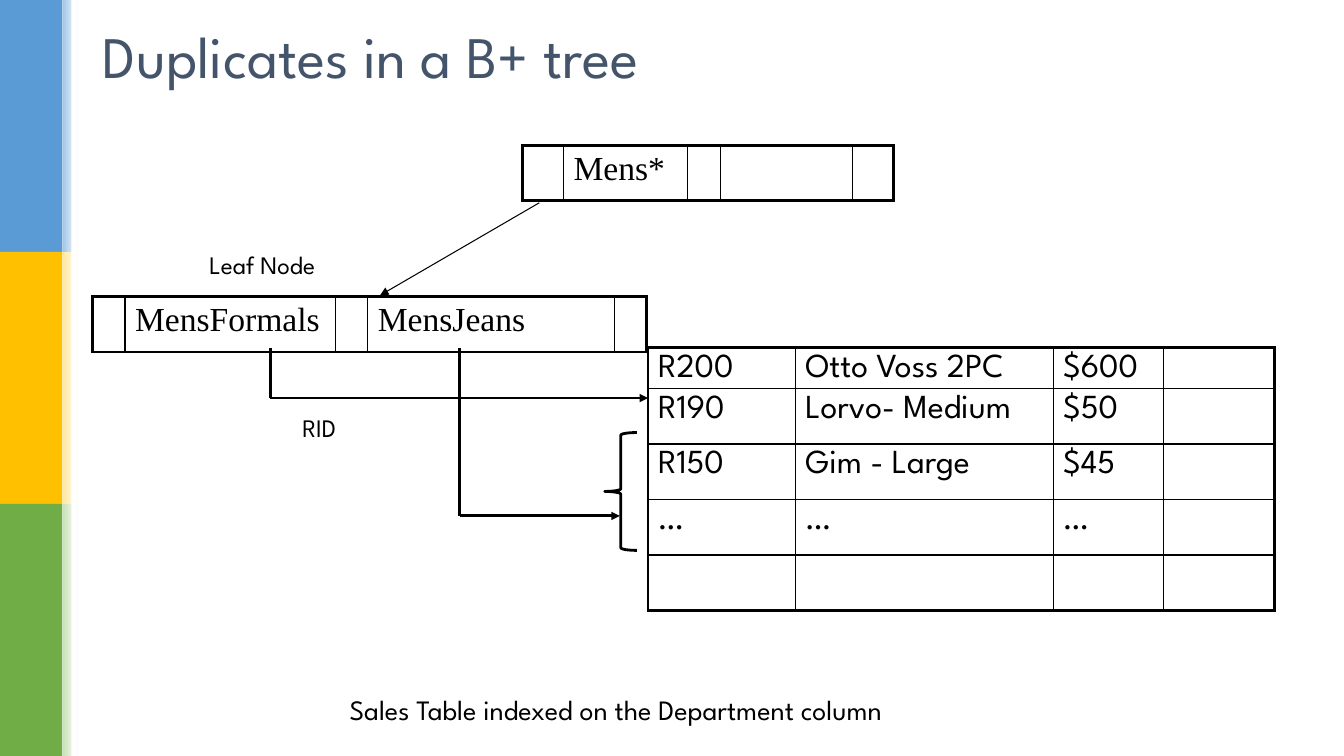
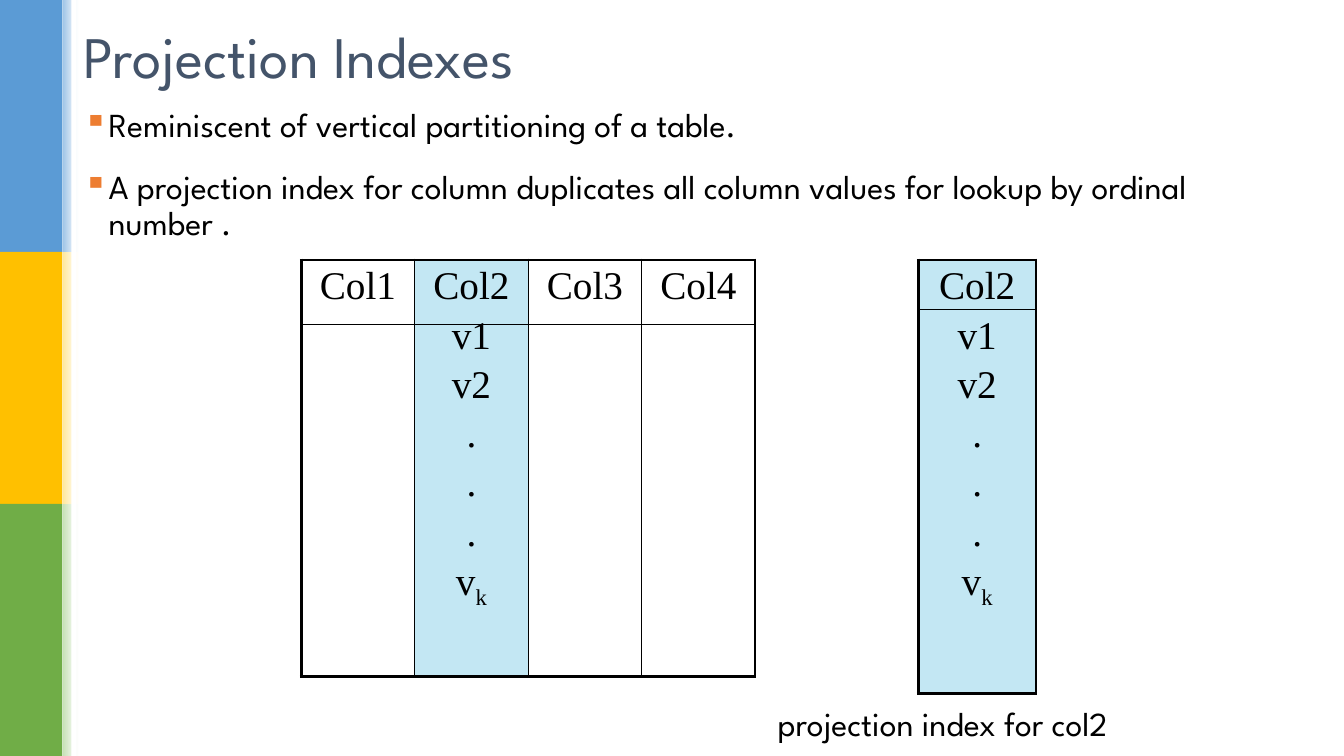
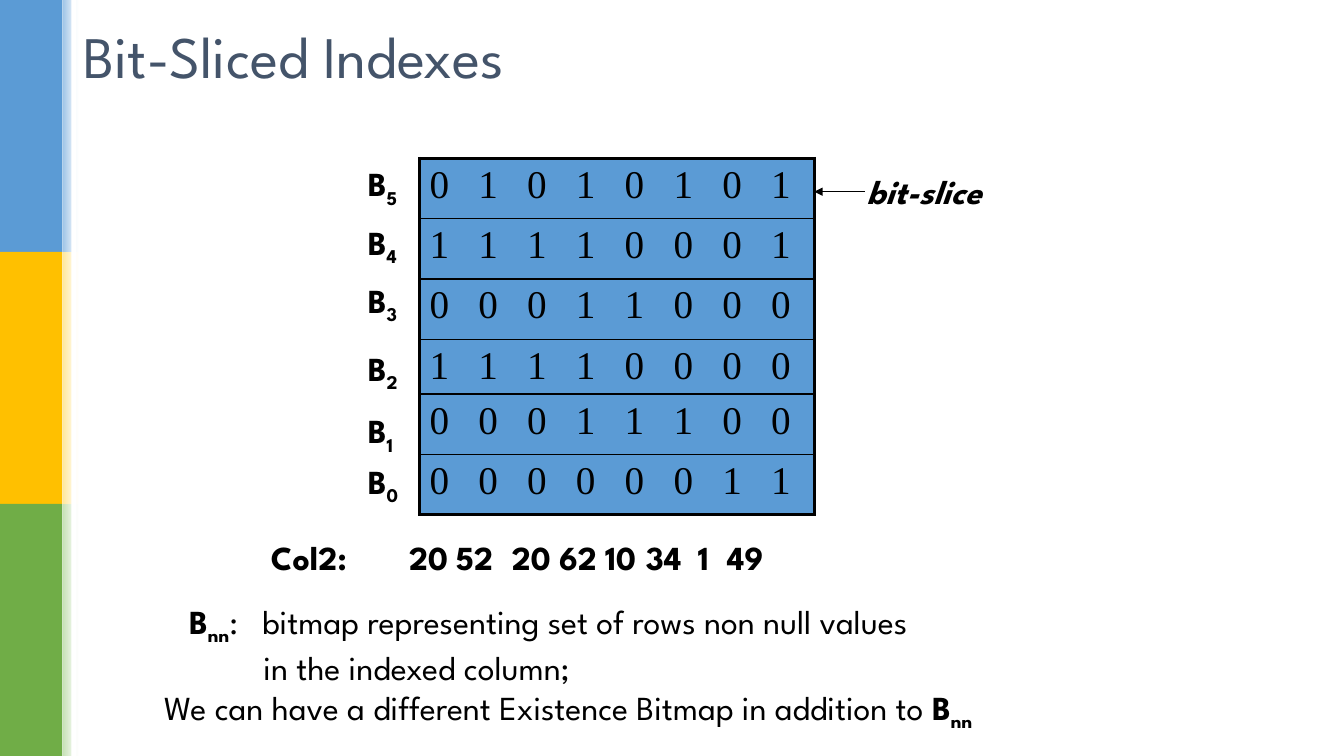
from lxml.etree import SubElement
from pptx import Presentation
from pptx.dml.color import RGBColor
from pptx.enum.shapes import MSO_CONNECTOR as Connector, MSO_SHAPE as Shape
from pptx.enum.text import MSO_ANCHOR as Anchor, MSO_AUTO_SIZE as AutoSize, PP_ALIGN as Align
from pptx.oxml.ns import qn
from pptx.util import Cm, Pt

BLACK = RGBColor(0x00, 0x00, 0x00)
WHITE = RGBColor(0xFF, 0xFF, 0xFF)
SLATE = RGBColor(0x44, 0x54, 0x6A)
BLUE = RGBColor(0x5B, 0x9B, 0xD5)
YELLOW = RGBColor(0xFF, 0xC0, 0x00)
GREEN = RGBColor(0x70, 0xAD, 0x47)
PALE_BLUE = RGBColor(0x9D, 0xC3, 0xE6)
PALE_YELLOW = RGBColor(0xFF, 0xE6, 0x99)
PALE_GREEN = RGBColor(0xC5, 0xE0, 0xB4)
ORANGE = RGBColor(0xED, 0x7D, 0x31)
SKY = RGBColor(0xC3, 0xE7, 0xF3)

SANS = "League Spartan"
SERIF = "Times New Roman"
SLIDE_WIDTH, SLIDE_HEIGHT = 33.87, 19.05
BANDS = [(BLUE, PALE_BLUE), (YELLOW, PALE_YELLOW), (GREEN, PALE_GREEN)]
THIN, THICK = 1, 2.25


def write(paragraph, text, size=24, font=SANS, color=BLACK, bold=False, italic=False):
    """Write text in which every second part between underscores is a subscript."""
    for index, part in enumerate(text.split("_")):
        if not part:
            continue
        run = paragraph.add_run()
        run.text = part
        run.font.size = Pt(size)
        run.font.name = font
        run.font.color.rgb = color
        run.font.bold = bold
        run.font.italic = italic
        if index % 2:
            run.font._element.set("baseline", "-25000")


def set_indent(paragraph, left, first=0):
    properties = paragraph._p.get_or_add_pPr()
    properties.set("marL", str(Cm(left)))
    properties.set("indent", str(Cm(first)))
    return properties


def set_bullet(paragraph):
    properties = set_indent(paragraph, 0.64, -0.64)
    color = SubElement(properties, qn("a:buClr"))
    SubElement(color, qn("a:srgbClr"), val=str(ORANGE))
    SubElement(properties, qn("a:buChar"), char="▪")


def set_tabs(paragraph, stops):
    tabs = SubElement(paragraph._p.get_or_add_pPr(), qn("a:tabLst"))
    for stop in stops:
        SubElement(tabs, qn("a:tab"), pos=str(Cm(stop)), algn="l")


def add_frame(slide, left, top, width, height=1.27):
    frame = slide.shapes.add_textbox(Cm(left), Cm(top), Cm(width), Cm(height)).text_frame
    frame.word_wrap = True
    return frame


def add_text(slide, text, left, top, width, **text_format):
    paragraph = add_frame(slide, left, top, width).paragraphs[0]
    write(paragraph, text, **text_format)
    return paragraph


def add_box(slide, kind, left, top, width, height, fill=None):
    shape = slide.shapes.add_shape(kind, Cm(left), Cm(top), Cm(width), Cm(height))
    shape.shadow.inherit = False
    if fill is None:
        shape.fill.background()
        shape.line.color.rgb = BLACK
        shape.line.width = Pt(2)
    else:
        shape.fill.solid()
        shape.fill.fore_color.rgb = fill
        shape.line.fill.background()
    return shape


def add_line(slide, start, end, width=0.75, arrow=False):
    points = [Cm(value) for value in (*start, *end)]
    connector = slide.shapes.add_connector(Connector.STRAIGHT, *points)
    connector.line.color.rgb = BLACK
    connector.line.width = Pt(width)
    if arrow:
        SubElement(connector.get_or_add_ln(), qn("a:tailEnd"), type="triangle")
    SubElement(connector.element.spPr, qn("a:effectLst"))


def set_borders(cell, **widths):
    properties = cell._tc.get_or_add_tcPr()
    for side in "LRTB":
        line = SubElement(properties, qn(f"a:ln{side}"), w=str(Pt(widths[side])))
        fill = SubElement(line, qn("a:solidFill"))
        SubElement(fill, qn("a:srgbClr"), val=str(BLACK))


def add_grid(slide, rows, left, top, widths, heights, fills=None, align=Align.LEFT,
             line_height=None, tabs=(), **text_format):
    fills = fills or {}
    last_row, last_column = len(heights) - 1, len(widths) - 1
    table = slide.shapes.add_table(len(heights), len(widths), Cm(left), Cm(top),
                                   Cm(sum(widths)), Cm(sum(heights))).table
    table.first_row = table.horz_banding = False
    for column, width in zip(table.columns, widths):
        column.width = Cm(width)
    for row, height in zip(table.rows, heights):
        row.height = Cm(height)
    for row_index, values in enumerate(rows):
        for column_index, value in enumerate(values):
            cell = table.cell(row_index, column_index)
            set_borders(cell,
                        L=THIN if column_index else THICK,
                        R=THICK if column_index == last_column else THIN,
                        T=THIN if row_index else THICK,
                        B=THICK if row_index == last_row else THIN)
            if column_index in fills:
                cell.fill.solid()
                cell.fill.fore_color.rgb = fills[column_index]
            else:
                cell.fill.background()
            if value:
                fill_cell(cell, value, align, line_height, tabs, text_format)


def fill_cell(cell, value, align, line_height, tabs, text_format):
    for index, text in enumerate(value.split("\n")):
        paragraph = cell.text_frame.add_paragraph() if index else cell.text_frame.paragraphs[0]
        if tabs:
            set_tabs(paragraph, tabs)
        paragraph.alignment = align
        if index:
            paragraph.space_before = Pt(4.2)
        if line_height:
            paragraph.line_spacing = Pt(line_height)
            cell.margin_bottom = 0
        write(paragraph, text, **text_format)


def add_slide(presentation, title, left=1.85):
    slide = presentation.slides.add_slide(presentation.slide_layouts[5])
    shape = slide.shapes.title
    shape.left, shape.top, shape.width, shape.height = Cm(left), Cm(0.3), Cm(29.21), Cm(2.18)
    frame = shape.text_frame
    frame.word_wrap = True
    frame.auto_size = AutoSize.NONE
    frame.vertical_anchor = Anchor.MIDDLE
    frame.paragraphs[0].alignment = Align.LEFT
    write(frame.paragraphs[0], title, size=42, color=SLATE)
    return slide


def put_bands_on_layout(slide):
    layout = slide.slide_layout
    for placeholder in list(layout.placeholders)[1:]:
        layout.shapes.element.remove(placeholder.element)
    height = SLIDE_HEIGHT / len(BANDS)
    shapes = []
    for index, (color, pale) in enumerate(BANDS):
        shapes.append(add_box(slide, Shape.RECTANGLE, 0, index * height, 1.57, height, color))
        edge = add_box(slide, Shape.RECTANGLE, 1.57, index * height, 0.41, height, pale)
        edge.fill.gradient()
        edge.fill.gradient_angle = 0
        for stop, stop_color in zip(edge.fill.gradient_stops, (pale, WHITE)):
            stop.color.rgb = stop_color
        shapes.append(edge)
    shapes.append(add_box(slide, Shape.RECTANGLE, 1.8, 0, 0.13, SLIDE_HEIGHT, WHITE))
    for shape in shapes:
        layout.shapes.element.append(shape.element)


def build_duplicates(presentation):
    slide = add_slide(presentation, "Duplicates in a B+ tree", left=2.34)
    put_bands_on_layout(slide)
    add_grid(slide, [["", "MensFormals", "", "MensJeans", ""]], 2.34, 7.47,
             [0.81, 5.31, 0.81, 6.22, 0.81], [1.4], font=SERIF)
    add_grid(slide, [["", "Mens*", "", "", ""]], 13.16, 3.66,
             [1.04, 3.12, 0.84, 3.33, 1.02], [1.4], font=SERIF)
    add_line(slide, (13.59, 5.11), (9.58, 7.44), arrow=True)
    sales = [
        ["R200", "Otto Voss 2PC", "$600", ""],
        ["R190", "Lorvo- Medium", "$50", ""],
        ["R150", "Gim - Large", "$45", ""],
        ["…", "…", "…", ""],
        ["", "", "", ""],
    ]
    add_grid(slide, sales, 16.33, 8.76, [3.71, 6.5, 2.79, 2.79], [1.03] + [1.4] * 4,
             line_height=23)
    for x, y, target in [(6.81, 10.03, 16.33), (11.58, 13.0, 15.62)]:
        add_line(slide, (x, 8.76), (x, y), width=2)
        add_line(slide, (x, y), (target, y), width=2, arrow=True)
    add_text(slide, "Leaf Node", 5.03, 6.17, 4.11, size=18)
    add_text(slide, "RID", 7.37, 10.26, 1.98, size=18)
    add_text(slide, "Sales Table indexed on the Department column", 8.56, 17.32, 17.25, size=20)
    add_box(slide, Shape.LEFT_BRACE, 15.24, 10.9, 0.81, 2.97)


def build_projection(presentation):
    slide = add_slide(presentation, "Projection Indexes")
    frame = add_frame(slide, 1.85, 2.62, 30.7, 3.99)
    first, second = frame.paragraphs[0], frame.add_paragraph()
    for paragraph, text in [
        (first, "Reminiscent of vertical partitioning of a table."),
        (second, "A projection index for column duplicates all column values "
                 "for lookup by ordinal number ."),
    ]:
        set_bullet(paragraph)
        paragraph.line_spacing = 0.9
        write(paragraph, text)
    first.space_after = Pt(12)
    second.space_before = Pt(6)

    values = "Col2\nv1\nv2\n.\n.\n.\nv_k"
    style = dict(align=Align.CENTER, font=SERIF, size=28)
    add_grid(slide, [["Col1", values, "Col3", "Col4"]], 7.59, 6.55, [2.86] * 4, [10.5],
             fills={1: SKY}, **style)
    add_line(slide, (7.59, 8.18), (19.03, 8.18))
    add_grid(slide, [[values]], 23.14, 6.55, [2.97], [10.92], fills={0: SKY}, **style)
    add_line(slide, (23.14, 7.8), (26.11, 7.8))
    add_text(slide, "projection index for col2", 19.35, 17.6, 10.54)


def build_bit_sliced(presentation):
    slide = add_slide(presentation, "Bit-Sliced Indexes")
    slices = ["01010101", "11110001", "00011000", "11110000", "00011100", "00000011"]
    add_grid(slide, [["\t".join(bits)] for bits in slices], 10.57, 3.99, [9.96],
             [1.52, 1.52, 1.52, 1.38, 1.52, 1.52], fills={0: BLUE},
             tabs=[1.23 * step for step in range(1, 8)], font=SERIF, size=28)
    for index, top in enumerate([11.48, 10.21, 8.64, 6.93, 5.46, 3.99]):
        add_text(slide, f"B_{index}", 9.02, top, 1.6, bold=True)
    add_line(slide, (21.79, 4.83), (20.52, 4.83), arrow=True)
    add_text(slide, "bit-slice", 21.59, 4.19, 3.78, bold=True, italic=True)

    column = add_text(slide, "Col2:\t20\t52\t20\t62\t10\t34\t1\t49", 6.58, 13.41, 14.2, bold=True)
    set_tabs(column, [3.48, 4.66, 6.07, 7.26, 8.42, 9.45, 10.76, 11.49])

    frame = add_frame(slide, 3.89, 15.01, 25.2, 3.33)
    definition = frame.paragraphs[0]
    set_indent(definition, 2.47, -1.84)
    write(definition, "B_nn", bold=True)
    write(definition, ":\tbitmap representing set of rows non null values")
    continuation = frame.add_paragraph()
    set_indent(continuation, 2.5)
    write(continuation, "in the indexed column;")
    remark = frame.add_paragraph()
    write(remark, "We can have a different Existence Bitmap in addition to ")
    write(remark, "B_nn", bold=True)


def main():
    presentation = Presentation()
    presentation.slide_width = Cm(SLIDE_WIDTH)
    presentation.slide_height = Cm(SLIDE_HEIGHT)
    build_duplicates(presentation)
    build_projection(presentation)
    build_bit_sliced(presentation)
    presentation.save("out.pptx")


if __name__ == "__main__":
    main()
